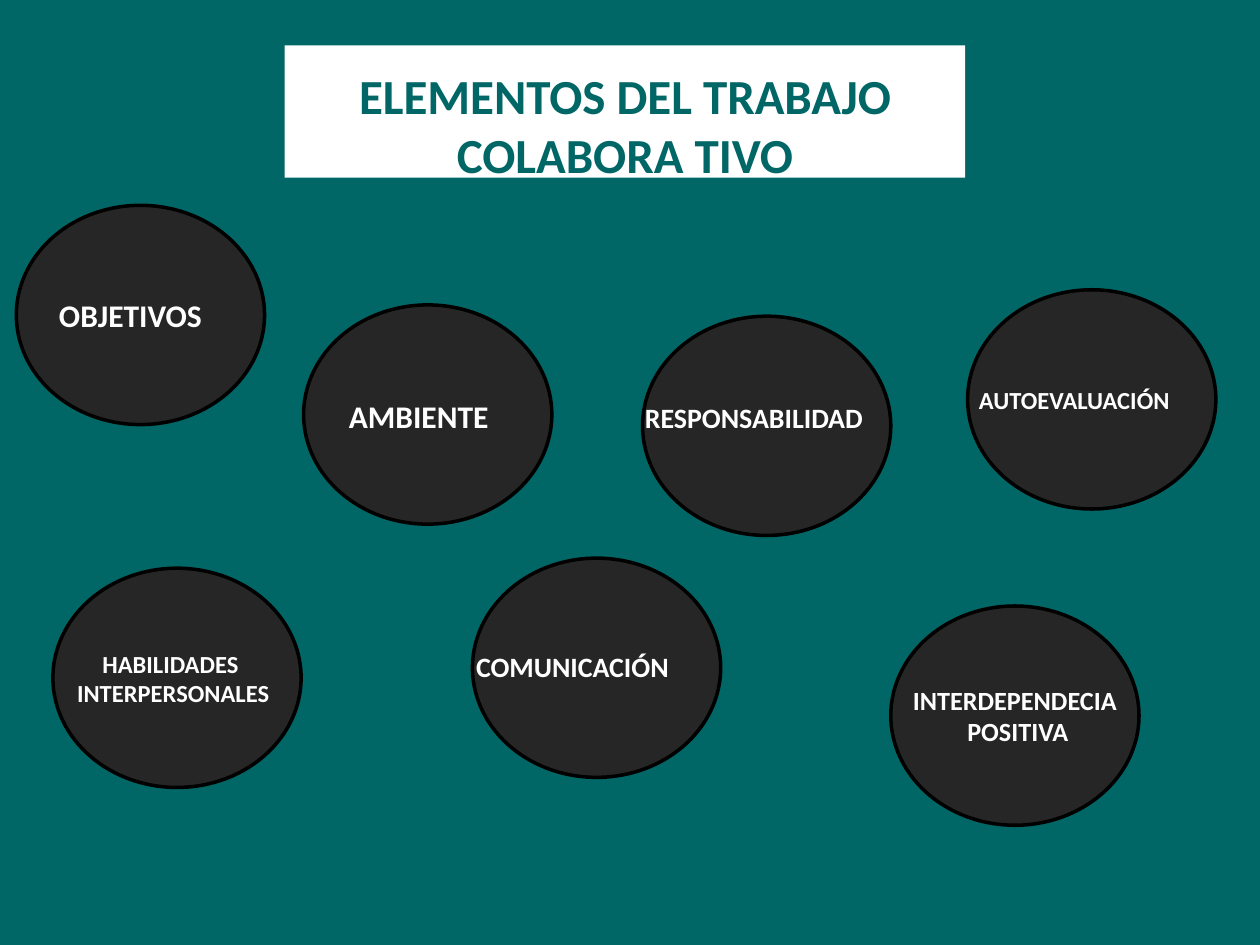
from dataclasses import dataclass

from pptx import Presentation
from pptx.dml.color import RGBColor
from pptx.enum.shapes import MSO_SHAPE
from pptx.enum.text import MSO_ANCHOR, MSO_AUTO_SIZE, PP_ALIGN
from pptx.util import Inches, Pt

CIRCLE = MSO_SHAPE.FLOWCHART_CONNECTOR
TOP = MSO_ANCHOR.TOP
NO_AUTOFIT = MSO_AUTO_SIZE.NONE
LEFT, CENTER = PP_ALIGN.LEFT, PP_ALIGN.CENTER
TITLE_ONLY = 5


@dataclass(frozen=True)
class Theme:
    """Colours, font and type sizes of the slide."""
    teal: RGBColor = RGBColor(0x00, 0x66, 0x66)
    white: RGBColor = RGBColor(0xFF, 0xFF, 0xFF)
    charcoal: RGBColor = RGBColor(0x26, 0x26, 0x26)
    black: RGBColor = RGBColor(0x00, 0x00, 0x00)
    font: str = "Calibri"
    title: int = 28
    large: int = 18
    medium: int = 16
    compact: int = 15
    small: int = 14


THEME = Theme()
CIRCLE_WIDTH, CIRCLE_HEIGHT = 1.97, 1.74

# Each element: lines, circle position, label box within the circle, size, alignment
ELEMENTS = [
    (["OBJETIVOS"], (0.13, 1.63), (0.24, 0.67, 1.5, 0.4), THEME.large, LEFT),
    (["AMBIENTE"], (2.41, 2.42), (0.26, 0.68, 1.45, 0.4), THEME.large, LEFT),
    (["INTERDEPENDECIA", " POSITIVA"], (7.07, 4.81), (-0.08, 0.57, 2.13, 0.61),
     THEME.compact, CENTER),
    (["COMUNICACIÓN"], (3.75, 4.43), (-0.07, 0.68, 2.04, 0.37), THEME.medium, LEFT),
    (["AUTOEVALUACIÓN"], (7.68, 2.3), (-0.01, 0.71, 1.98, 0.34), THEME.small, LEFT),
    (["HABILIDADES ", "INTERPERSONALES"], (0.42, 4.51), (0, 0.59, 1.91, 0.57),
     THEME.small, CENTER),
    (["RESPONSABILIDAD"], (5.1, 2.51), (-0.08, 0.62, 2.13, 0.37), THEME.medium, LEFT),
]


def write_lines(frame, lines, size, color, align):
    """Write bold lines as paragraphs of a wrapped, top-anchored frame."""
    frame.word_wrap = True
    frame.auto_size = NO_AUTOFIT
    frame.vertical_anchor = TOP
    frame.text = "\n".join(lines)
    for paragraph in frame.paragraphs:
        paragraph.alignment = align
        paragraph.line_spacing = 1.0
        paragraph.space_before = Pt(0)
        paragraph.font.name = THEME.font
        paragraph.font.size = Pt(size)
        paragraph.font.bold = True
        paragraph.font.color.rgb = color


def place_title(slide, left, top, width, height):
    """Place the title on its white panel."""
    title = slide.shapes.title
    title.left, title.top = Inches(left), Inches(top)
    title.width, title.height = Inches(width), Inches(height)
    title.fill.solid()
    title.fill.fore_color.rgb = THEME.white
    frame = title.text_frame
    frame.margin_left = frame.margin_right = Inches(0)
    frame.margin_top = Inches(0.16)
    write_lines(frame, ["ELEMENTOS DEL TRABAJO COLABORA TIVO"],
                THEME.title, THEME.teal, CENTER)


def place_element(slide, lines, position, label_box, size, align):
    """Place one grouped circle and its label."""
    left, top = position
    dx, dy, width, height = label_box
    group = slide.shapes.add_group_shape()
    circle = group.shapes.add_shape(CIRCLE, Inches(left), Inches(top),
                                    Inches(CIRCLE_WIDTH), Inches(CIRCLE_HEIGHT))
    circle.shadow.inherit = False
    circle.fill.solid()
    circle.fill.fore_color.rgb = THEME.charcoal
    circle.line.color.rgb = THEME.black
    circle.line.width = Pt(2)
    label = group.shapes.add_textbox(Inches(left + dx), Inches(top + dy),
                                     Inches(width), Inches(height))
    write_lines(label.text_frame, lines, size, THEME.white, align)


def main():
    """Build and save the slide."""
    deck = Presentation()
    deck.slide_width, deck.slide_height = Inches(10), Inches(7.5)
    slide = deck.slides.add_slide(deck.slide_layouts[TITLE_ONLY])
    slide.background.fill.solid()
    slide.background.fill.fore_color.rgb = THEME.teal
    place_title(slide, 2.26, 0.36, 5.4, 1.05)
    for element in ELEMENTS:
        place_element(slide, *element)
    deck.save("out.pptx")


if __name__ == "__main__":
    main()
